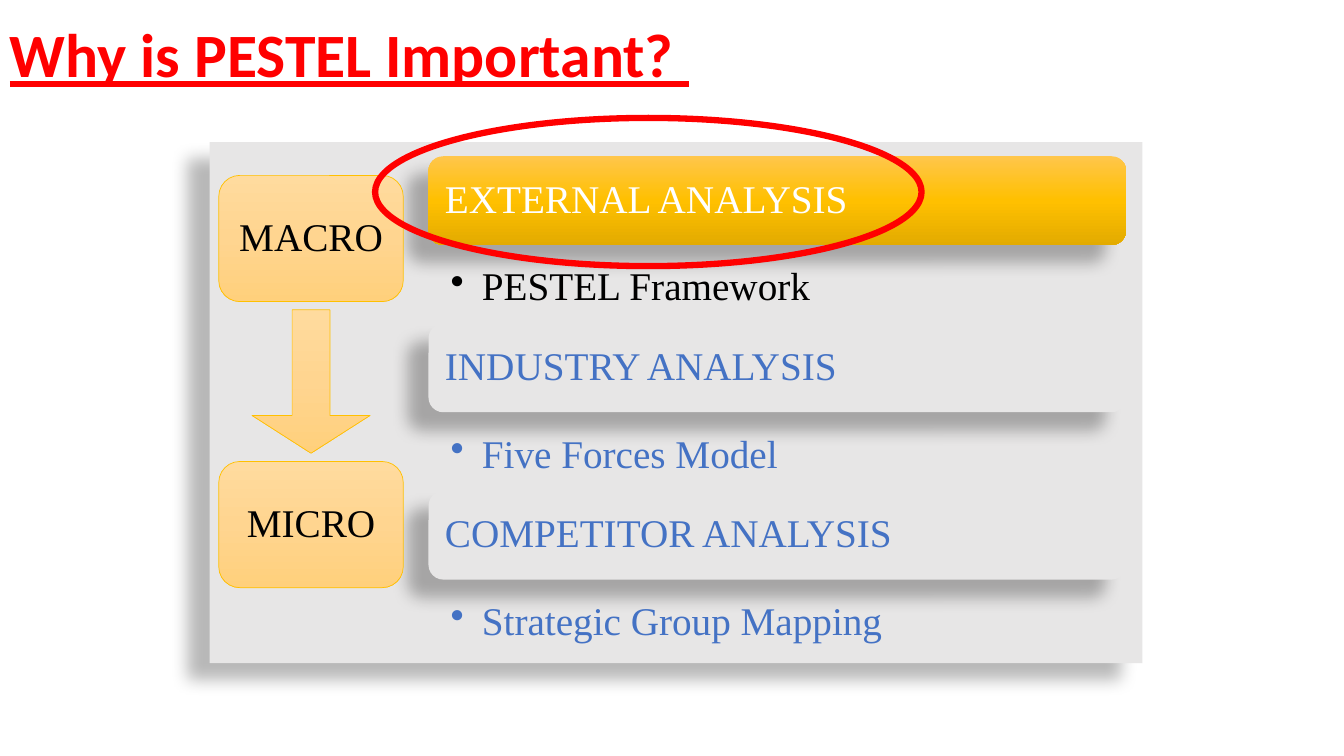
from lxml.etree import SubElement
from pptx import Presentation
from pptx.dml.color import RGBColor
from pptx.enum.shapes import MSO_SHAPE
from pptx.enum.text import MSO_ANCHOR, PP_ALIGN
from pptx.oxml.ns import qn
from pptx.util import Inches, Pt

SERIF = "Times New Roman"
GREY, BLUE, RED = "E7E6E6", "4472C4", "FF0000"
GOLD = ["FFC64B", "FFC000", "E3AB00"]
PEACH = ["FFDB9E", "FFD590", "FFD07C"]
STEPS = [
    ("EXTERNAL ANALYSIS", "PESTEL Framework", GOLD, "FFFFFF", "000000"),
    ("INDUSTRY ANALYSIS", "Five Forces Model", GREY, BLUE, BLUE),
    ("COMPETITOR ANALYSIS", "Strategic Group Mapping", GREY, BLUE, BLUE),
]


def color(value):
    return RGBColor.from_string(value)


def add_gradient(shape, stops):
    shape.fill.gradient()
    gradient = shape._element.spPr.find(qn("a:gradFill"))
    for child in list(gradient):
        gradient.remove(child)
    stop_list = SubElement(gradient, qn("a:gsLst"))
    for index, value in enumerate(stops):
        stop = SubElement(stop_list, qn("a:gs"), pos=str(index * 50000))
        SubElement(stop, qn("a:srgbClr"), val=value)
    SubElement(gradient, qn("a:lin"), ang="5400000", scaled="0")


def add_shadow(shape):
    effects = shape._element.spPr.find(qn("a:effectLst"))
    shadow = SubElement(effects, qn("a:outerShdw"), blurRad=str(Pt(11.8)), dist=str(Pt(19.7)),
                        dir=str(141 * 60000), algn="ctr", rotWithShape="0")
    black = SubElement(shadow, qn("a:srgbClr"), val="000000")
    SubElement(black, qn("a:alpha"), val="28000")


def add_figure(slide, kind, box, fill=None, line=None, width=0.5):
    figure = slide.shapes.add_shape(kind, *map(Inches, box))
    figure.shadow.inherit = False
    if fill is None:
        figure.fill.background()
    elif isinstance(fill, list):
        add_gradient(figure, fill)
    else:
        figure.fill.solid()
        figure.fill.fore_color.rgb = color(fill)
    if line:
        figure.line.color.rgb = color(line)
        figure.line.width = Pt(width)
    else:
        figure.line.fill.background()
    return figure


def write(shape, text, ink, insets, size=28, font=SERIF, align=PP_ALIGN.LEFT,
          anchor=MSO_ANCHOR.MIDDLE):
    frame = shape.text_frame
    frame.word_wrap = True
    frame.vertical_anchor = anchor
    frame.margin_left, frame.margin_top, frame.margin_right, frame.margin_bottom = map(Inches, insets)
    paragraph = frame.paragraphs[0]
    paragraph.alignment = align
    paragraph.line_spacing = 0.9
    run = paragraph.add_run()
    run.text = text
    run.font.size = Pt(size)
    run.font.name = font
    run.font.color.rgb = color(ink)
    return paragraph, run


def add_bullet(paragraph):
    properties = paragraph._p.get_or_add_pPr()
    properties.set("marL", str(Inches(0.31)))
    properties.set("indent", str(-Inches(0.31)))
    SubElement(properties, qn("a:buChar"), char="•")


def draw_title(slide, box):
    title = slide.shapes.add_textbox(*map(Inches, box))
    _, run = write(title, "Why is PESTEL Important? ", RED, (0.1, 0.05, 0.1, 0.05), 44, "Calibri")
    run.font.bold = True
    run.font.underline = True


def draw_ladder(slide, box):
    left, top, width, height = box
    pitch = height / len(STEPS)
    band_height = pitch * 0.53
    for index, (heading, method, fill, heading_ink, method_ink) in enumerate(STEPS):
        band_top = top + index * pitch
        band = add_figure(slide, MSO_SHAPE.ROUNDED_RECTANGLE,
                          (left, band_top, width, band_height), fill)
        add_shadow(band)
        write(band, heading, heading_ink, (0.12, 0.12, 0.12, 0.12))
        detail = slide.shapes.add_textbox(*map(Inches, (
            left, band_top + band_height, width, pitch - band_height)))
        paragraph, _ = write(detail, method, method_ink, (0.22, 0.22, 0.09, 0.02),
                             anchor=MSO_ANCHOR.TOP)
        add_bullet(paragraph)


def draw_flow(slide, box):
    left, top, width, height = box
    node_height, gap = height * 0.306, height * 0.02
    for level, node_top in (("MACRO", top), ("MICRO", top + height - node_height)):
        node = add_figure(slide, MSO_SHAPE.ROUNDED_RECTANGLE,
                          (left, node_top, width, node_height), PEACH, "FFC000")
        write(node, level, "010101", (0.1, 0.05, 0.1, 0.05), align=PP_ALIGN.CENTER)
    arrow_width = width * 0.64
    arrow = add_figure(slide, MSO_SHAPE.DOWN_ARROW,
                       (left + (width - arrow_width) / 2, top + node_height + gap,
                        arrow_width, height - 2 * (node_height + gap)), PEACH, "FFC000")
    arrow.adjustments[0] = arrow.adjustments[1] = 0.32


def draw_panel(slide, box):
    left, top, width, height = box
    add_shadow(add_figure(slide, MSO_SHAPE.RECTANGLE, box, GREY))
    draw_ladder(slide, (left + 2.17, top + 0.14, width - 2.33, height - 0.19))
    draw_flow(slide, (left + 0.09, top + 0.33, 1.83, height - 1.08))


def main():
    deck = Presentation()
    deck.slide_width, deck.slide_height = Inches(13.33), Inches(7.5)
    slide = deck.slides.add_slide(deck.slide_layouts[6])
    draw_panel(slide, (2.08, 1.41, 9.25, 5.17))
    draw_title(slide, (0, -0.15, 11.5, 1.45))
    add_figure(slide, MSO_SHAPE.OVAL, (3.72, 1.17, 5.42, 1.47), line=RED, width=4.5)
    deck.save("out.pptx")


if __name__ == "__main__":
    main()
